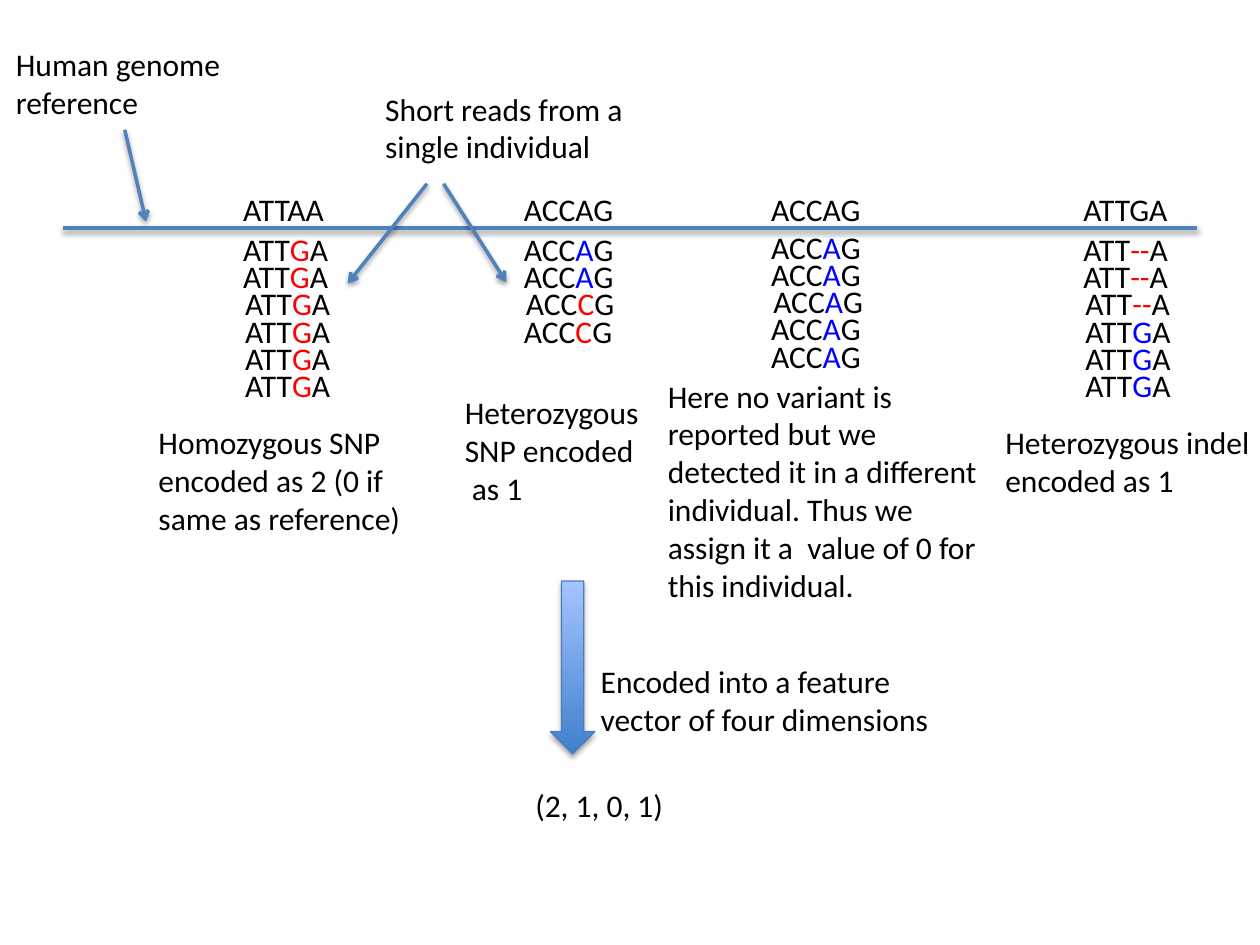
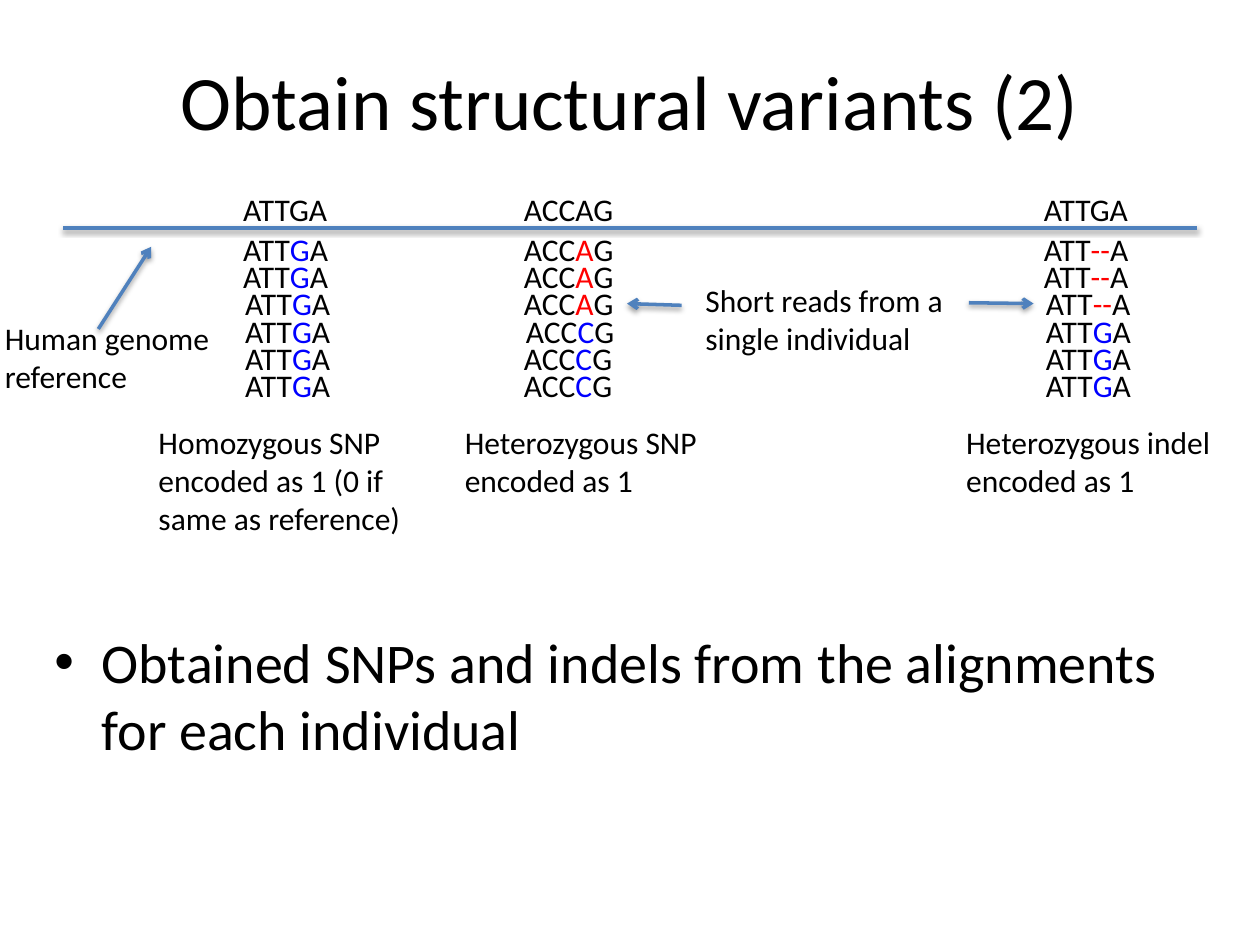
from dataclasses import dataclass
from typing import Optional

from lxml.etree import SubElement
from pptx import Presentation
from pptx.dml.color import RGBColor
from pptx.enum.shapes import MSO_CONNECTOR as Connector, MSO_SHAPE as Shape
from pptx.enum.text import MSO_ANCHOR as Anchor, MSO_AUTO_SIZE as AutoSize, PP_ALIGN as Align
from pptx.oxml.ns import qn
from pptx.util import Pt

# Shared style
BLACK = RGBColor(0x00, 0x00, 0x00)
RED = RGBColor(0xFF, 0x00, 0x00)
BLUE = RGBColor(0x00, 0x00, 0xFF)
STEEL = RGBColor(0x4F, 0x81, 0xBD)
ARROW_EDGE = RGBColor(0x4B, 0x7E, 0xBC)
ARROW_DARK = RGBColor(0x3F, 0x80, 0xCE)
ARROW_LIGHT = RGBColor(0xA4, 0xC4, 0xFF)

FONT = "Calibri"
BODY_SIZE = 18
LINE_HEIGHT = 21.8
INSET = 7.2
REFERENCE_TOP = 105
READ_PITCH = 15.5
NUDGE = 1.2
LEFT_SIDE, RIGHT_SIDE = 1, 3


@dataclass
class Label:
    left: float
    top: float
    width: float
    lines: tuple[str, ...]
    wrap: bool = False
    height: Optional[float] = None


@dataclass
class ReadGroup:
    """Consecutive reads that carry the same variant."""
    count: int
    variant: str
    color: RGBColor


@dataclass
class Alignment:
    """A reference sequence with the reads stacked under it."""
    left: float
    width: float
    reference: str
    groups: tuple[ReadGroup, ...]
    nudged_rows: tuple[int, ...]
    read_top: float = 128


@dataclass
class Arrow:
    start: tuple[float, float]
    end: tuple[float, float]


def style(font, size: float, color: RGBColor = BLACK) -> None:
    font.name = FONT
    font.size = Pt(size)
    font.color.rgb = color


def add_shadow(shape, distance: float, opacity: int) -> None:
    effects = SubElement(shape.element.spPr, qn("a:effectLst"))
    shadow = SubElement(effects, qn("a:outerShdw"), blurRad=str(Pt(3.1)),
                        dist=str(Pt(distance)), dir="5400000", rotWithShape="0")
    color = SubElement(shadow, qn("a:srgbClr"), val=str(BLACK))
    SubElement(color, qn("a:alpha"), val=str(opacity * 1000))


def add_box(page, left: float, top: float, width: float, height: float, wrap: bool):
    box = page.shapes.add_textbox(Pt(left), Pt(top), Pt(width), Pt(height))
    box.text_frame.word_wrap = wrap
    return box


def draw_label(page, label: Label) -> None:
    height = label.height or INSET + LINE_HEIGHT * len(label.lines)
    box = add_box(page, label.left, label.top, label.width, height, label.wrap)
    frame = box.text_frame
    frame.auto_size = AutoSize.SHAPE_TO_FIT_TEXT
    frame.text = "\n".join(label.lines)
    for para in frame.paragraphs:
        style(para.font, BODY_SIZE)


def draw_line(page, start: tuple[float, float], end: tuple[float, float], arrow: bool = False):
    line = page.shapes.add_connector(Connector.STRAIGHT, *map(Pt, start + end))
    line.line.color.rgb = STEEL
    line.line.width = Pt(2)
    if arrow:
        SubElement(line.element.spPr.find(qn("a:ln")), qn("a:tailEnd"), type="arrow")
    add_shadow(line, 1.6, 38)
    return line


def draw_arrow(page, arrow: Arrow):
    return draw_line(page, arrow.start, arrow.end, arrow=True)


def draw_alignment(page, column: Alignment) -> list:
    """Draw the reference and its reads; return the boxes of the reads."""
    draw_label(page, Label(column.left, REFERENCE_TOP, column.width, (column.reference,)))
    variants = [group for group in column.groups for _ in range(group.count)]
    boxes = []
    for row, group in enumerate(variants):
        left = column.left + (NUDGE if row in column.nudged_rows else 0)
        box = add_box(page, left, column.read_top + READ_PITCH * row,
                      column.width, INSET + LINE_HEIGHT, wrap=False)
        box.text_frame.auto_size = AutoSize.SHAPE_TO_FIT_TEXT
        para = box.text_frame.paragraphs[0]
        for text, color in ((column.reference[:3], BLACK), (group.variant, group.color),
                            (column.reference[4:], BLACK)):
            span = para.add_run()
            span.text = text
            style(span.font, BODY_SIZE, color)
        boxes.append(box)
    return boxes


def draw_genome(page, columns: tuple[Alignment, ...], labels: tuple[Label, ...]) -> list[list]:
    """Draw the reference line, the alignments and the labels."""
    draw_line(page, (36, 130.3), (684, 130.3))
    stacks = [draw_alignment(page, column) for column in columns]
    for label in labels:
        draw_label(page, label)
    return stacks


# Pieces that both slides use
LOWER_ROWS = (2, 3, 4, 5)
INDEL_GROUPS = (ReadGroup(3, "--", RED), ReadGroup(3, "G", BLUE))
INDEL_TEXT = ("Heterozygous indel", "encoded as 1")
GENOME_TEXT = ("Human genome", "reference")
READS_TEXT = ("Short reads from a", "single individual")


def indel_column(left: float) -> Alignment:
    return Alignment(left, 64.5, "ATTGA", INDEL_GROUPS, LOWER_ROWS)


def homozygous_label(code: int) -> Label:
    return Label(83.5, 238.3, 160.5,
                 ("Homozygous SNP", f"encoded as {code} (0 if", "same as reference)"), wrap=True)


def build_encoding_page(page) -> None:
    columns = (
        Alignment(131.8, 64.5, "ATTAA", (ReadGroup(6, "G", RED),), LOWER_ROWS),
        Alignment(292.3, 66, "ACCAG", (ReadGroup(2, "A", BLUE), ReadGroup(2, "C", RED)), (2,)),
        Alignment(433.6, 66, "ACCAG", (ReadGroup(5, "A", BLUE),), (2,), read_top=126.8),
        indel_column(612),
    )
    labels = (
        Label(2, 22.3, 132.5, GENOME_TEXT),
        Label(213, 47.7, 152, READS_TEXT),
        homozygous_label(2),
        Label(258.5, 221, 116.6, ("Heterozygous", "SNP encoded", " as 1")),
        Label(374.5, 211.7, 202.3,
              ("Here no variant is reported but we detected it in a different individual. "
               "Thus we assign it a  value of 0 for this individual.",), wrap=True, height=138),
        Label(567.4, 238.3, 157, INDEL_TEXT),
        Label(336.2, 374.7, 204.5, ("Encoded into a feature", "vector of four dimensions")),
        Label(298.8, 445.7, 88.6, ("(2, 1, 0, 1)",)),
    )
    draw_genome(page, columns, labels)
    for arrow in (Arrow((71.3, 74.2), (83.5, 126.7)),
                  Arrow((244, 105), (198.7, 162)),
                  Arrow((253.5, 105), (289.4, 161.3))):
        draw_arrow(page, arrow)

    # Block arrow to the feature vector
    block = page.shapes.add_shape(Shape.DOWN_ARROW, Pt(314.6), Pt(332), Pt(25.4), Pt(98.8))
    block.fill.gradient()
    block.fill.gradient_angle = 90
    for stop, color in zip(block.fill.gradient_stops, (ARROW_DARK, ARROW_LIGHT)):
        stop.color.rgb = color
    block.line.color.rgb = ARROW_EDGE
    block.line.width = Pt(0.75)
    add_shadow(block, 1.8, 35)


def build_variants_page(page) -> None:
    # Title
    title = add_box(page, 36, 12.2, 648, 90, wrap=True).text_frame
    title.vertical_anchor = Anchor.MIDDLE
    title.text = "Obtain structural variants (2)"
    title.paragraphs[0].alignment = Align.CENTER
    style(title.paragraphs[0].font, 44)

    # Bullet
    body = add_box(page, 24, 355, 648, 130, wrap=True).text_frame
    body.text = "Obtained SNPs and indels from the alignments for each individual"
    para = body.paragraphs[0]
    style(para.font, 32)
    properties = para._p.get_or_add_pPr()
    properties.set("marL", str(Pt(27)))
    properties.set("indent", str(-Pt(27)))
    SubElement(properties, qn("a:buFont"), typeface="Arial")
    SubElement(properties, qn("a:buChar"), char="•")
    # The default run properties follow the bullet in the schema
    properties.append(properties.find(qn("a:defRPr")))

    columns = (
        Alignment(131.8, 64.5, "ATTGA", (ReadGroup(6, "G", BLUE),), LOWER_ROWS),
        Alignment(292.3, 66, "ACCAG", (ReadGroup(3, "A", RED), ReadGroup(3, "C", BLUE)), (3,)),
        indel_column(589.4),
    )
    labels = (
        Label(-4.3, 178.6, 132.5, GENOME_TEXT),
        Label(396, 157, 152, READS_TEXT),
        homozygous_label(1),
        Label(258.5, 238.3, 149.8, ("Heterozygous SNP", "encoded as 1")),
        Label(545, 238.3, 157, INDEL_TEXT),
    )
    _, snp_reads, indel_reads = draw_genome(page, columns, labels)
    draw_arrow(page, Arrow((56.2, 188), (86.4, 141)))
    to_indel = draw_arrow(page, Arrow((553.7, 173), (590.4, 173.5)))
    to_indel.end_connect(indel_reads[2], LEFT_SIDE)
    to_snp = draw_arrow(page, Arrow((389.5, 174.5), (360, 174.5)))
    to_snp.end_connect(snp_reads[2], RIGHT_SIDE)


def main() -> None:
    deck = Presentation()
    deck.slide_width, deck.slide_height = Pt(720), Pt(540)
    blank = deck.slide_layouts[6]
    for build in (build_encoding_page, build_variants_page):
        build(deck.slides.add_slide(blank))
    deck.save("out.pptx")


if __name__ == "__main__":
    main()
